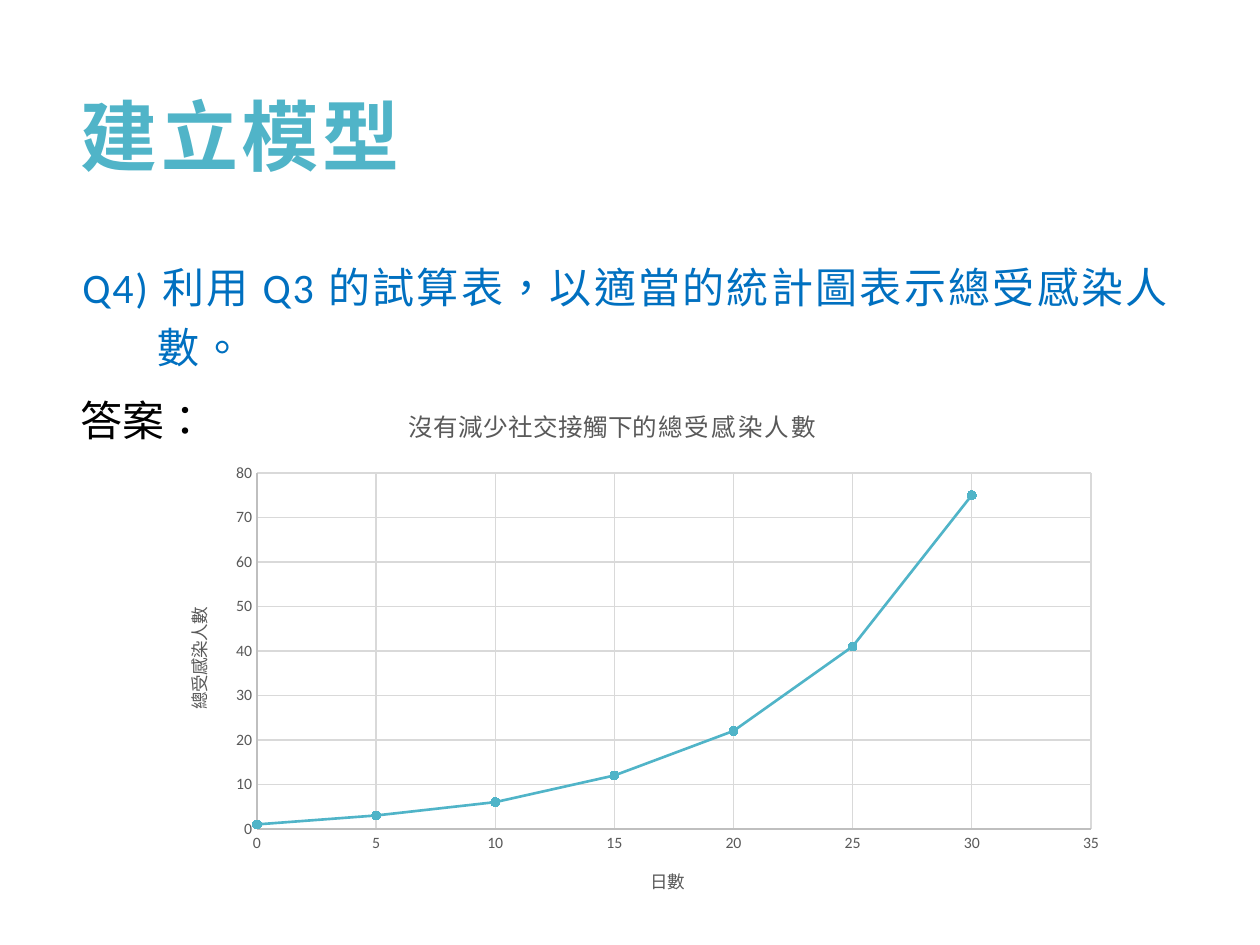
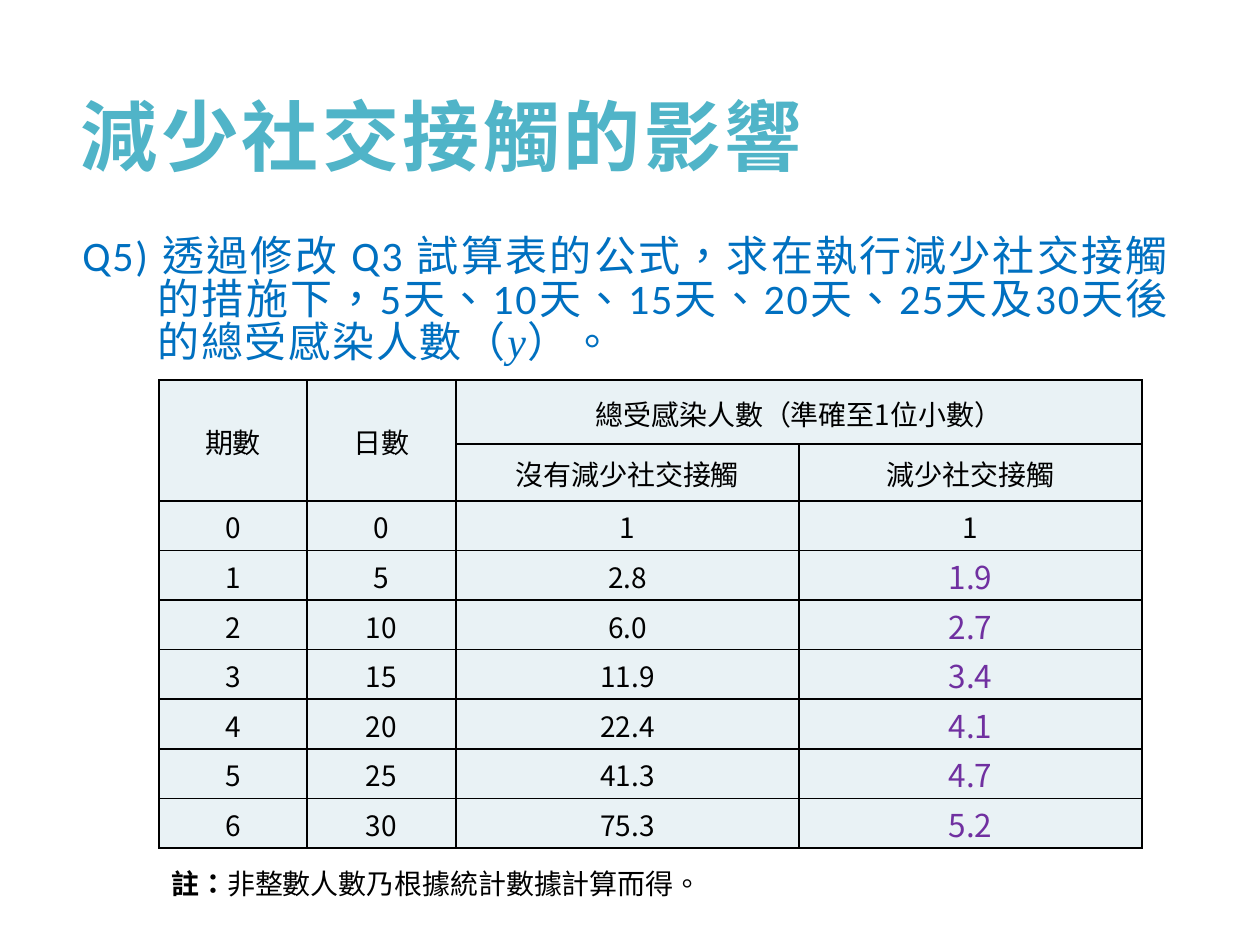
from lxml import etree
from pptx import Presentation
from pptx import util as u
from pptx.chart import data as chart_data
from pptx.dml import color as dml
from pptx.enum import chart as chart_enum, lang, text
from pptx.oxml import ns

SCALE = 914400 / 126
CHART_WIDTH, CHART_HEIGHT = 961, 532
COLOURS = {
    "title": "50B4C8",
    "question": "0070C0",
    "ink": "000000",
    "answer": "7030A0",
    "cell": "E9F2F5",
    "label": "595959",
    "axis": "BFBFBF",
    "grid": "D9D9D9",
}
BASE = {"name": "Calibri", "colour": "ink", "bold": False, "italic": False}
TITLE = {**BASE, "size": 44, "colour": "title", "bold": True, "spacing": 2}
QUESTION = {**BASE, "size": 24, "colour": "question", "spacing": 1}
ANSWER = {**BASE, "size": 24}
NOTE = {**BASE, "size": 16}
CELL = {**NOTE, "name": "Noto Sans CJK SC"}
RESULT = {**CELL, "size": 18, "colour": "answer"}
CHART_TITLE = {**BASE, "size": 14, "colour": "label"}
AXIS_TITLE = {**CHART_TITLE, "size": 10}
TICK_LABEL = {**CHART_TITLE, "size": 9}

PERIODS = [
    (0, 0, "1", "1"),
    (1, 5, "2.8", "1.9"),
    (2, 10, "6.0", "2.7"),
    (3, 15, "11.9", "3.4"),
    (4, 20, "22.4", "4.1"),
    (5, 25, "41.3", "4.7"),
    (6, 30, "75.3", "5.2"),
]


def px(length):
    return u.Emu(round(length * SCALE))


def rgb(colour):
    return dml.RGBColor.from_string(COLOURS[colour])


def set_attributes(target, values):
    for attribute, value in values.items():
        setattr(target, attribute, value)


def format_font(font, style):
    set_attributes(font, {
        "name": style["name"],
        "size": u.Pt(style["size"]),
        "bold": style["bold"],
        "italic": style["italic"],
    })
    font.color.rgb = rgb(style["colour"])


def write(paragraph, *pieces):
    for words, style in pieces:
        run = paragraph.add_run()
        run.text = words
        format_font(run.font, style)
        run.font.language_id = lang.MSO_LANGUAGE_ID.CHINESE_HONG_KONG_SAR
        properties = run.font._element
        if "spacing" in style:
            properties.set("spc", str(style["spacing"] * 100))
        if style["name"] == CELL["name"]:
            latin = properties.find(ns.qn("a:latin"))
            east_asian = etree.Element(ns.qn("a:ea"), typeface=style["name"])
            latin.addnext(east_asian)


def add_titled_slide(deck, heading):
    slide = deck.slides.add_slide(deck.slide_layouts[5])
    title = slide.shapes.title
    set_attributes(title, {
        "left": px(68), "top": px(69), "width": px(1114), "height": px(132),
    })
    set_attributes(title.text_frame, {
        "word_wrap": True,
        "auto_size": text.MSO_AUTO_SIZE.NONE,
        "vertical_anchor": text.MSO_ANCHOR.MIDDLE,
    })
    paragraph = title.text_frame.paragraphs[0]
    paragraph.alignment = text.PP_ALIGN.LEFT
    write(paragraph, (heading, TITLE))
    return slide


def add_text(slide, box, *pieces):
    frame = slide.shapes.add_textbox(*map(px, box)).text_frame
    frame.word_wrap = True
    paragraph = frame.paragraphs[0]
    write(paragraph, *pieces)
    return paragraph


def add_question(slide, top, height, line_spacing, *pieces):
    paragraph = add_text(slide, (70, top, 1112, height), *pieces)
    set_attributes(paragraph, {
        "alignment": text.PP_ALIGN.JUSTIFY,
        "line_spacing": line_spacing,
        "space_before": u.Pt(13),
    })
    properties = paragraph._p.get_or_add_pPr()
    properties.set("marL", str(px(75)))
    properties.set("indent", str(-px(75)))


def place(element, x, y, width=None, height=None):
    layout = element.find(ns.qn("c:layout"))
    if layout is None:
        layout = etree.Element(ns.qn("c:layout"))
        element.insert(len(element.findall(ns.qn("c:tx"))), layout)
    manual = etree.SubElement(layout, ns.qn("c:manualLayout"))
    settings = {"xMode": "edge", "yMode": "edge",
                "x": x / CHART_WIDTH, "y": y / CHART_HEIGHT}
    if width:
        settings = {"layoutTarget": "inner", **settings,
                    "w": width / CHART_WIDTH, "h": height / CHART_HEIGHT}
    for tag, value in settings.items():
        etree.SubElement(manual, ns.qn(f"c:{tag}"), val=str(value))


def write_chart_title(title, x, y, *pieces):
    write(title.text_frame.paragraphs[0], *pieces)
    place(title._element, x, y)


def draw_line(line, colour, width):
    line.color.rgb = rgb(colour)
    line.width = u.Pt(width)


def format_axis(axis, maximum, step, caption, x, y):
    set_attributes(axis, {
        "minimum_scale": 0,
        "maximum_scale": maximum,
        "major_unit": step,
        "major_tick_mark": chart_enum.XL_TICK_MARK.NONE,
        "minor_tick_mark": chart_enum.XL_TICK_MARK.NONE,
        "has_major_gridlines": True,
    })
    axis.tick_labels.number_format = "General"
    axis.tick_labels.number_format_is_linked = False
    format_font(axis.tick_labels.font, TICK_LABEL)
    draw_line(axis.format.line, "axis", 0.75)
    draw_line(axis.major_gridlines.format.line, "grid", 0.75)
    write_chart_title(axis.axis_title, x, y, (caption, AXIS_TITLE))


def add_infection_chart(slide):
    points = chart_data.XyChartData()
    infections = points.add_series("總受感染人數")
    for _, day, total, _ in PERIODS:
        infections.add_data_point(day, round(float(total)))
    chart = slide.shapes.add_chart(
        chart_enum.XL_CHART_TYPE.XY_SCATTER_LINES,
        *map(px, (158, 388, CHART_WIDTH, CHART_HEIGHT)), points).chart
    chart.has_legend = False
    format_font(chart.font, {**BASE, "size": 10})
    write_chart_title(chart.chart_title, 247, 13,
                      ("沒有減少社交接觸下的", CHART_TITLE),
                      ("總受感染人數", {**CHART_TITLE, "spacing": 1}))
    chart.chart_title.include_in_layout = False
    format_axis(chart.category_axis, 35, 5, "日數", 489, 476)
    format_axis(chart.value_axis, 80, 10, "總受感染人數", 24, 216)
    place(chart._chartSpace.chart.plotArea, 99, 85, 834, 356)

    chart.plots[0].vary_by_categories = False
    curve = chart.plots[0].series[0]
    curve.smooth = False
    draw_line(curve.format.line, "title", 1.5)
    marker = curve.marker
    marker.style = chart_enum.XL_MARKER_STYLE.CIRCLE
    marker.size = 5
    marker.format.fill.solid()
    marker.format.fill.fore_color.rgb = rgb("title")
    draw_line(marker.format.line, "title", 0.75)


def add_borders(cell):
    properties = cell._tc.get_or_add_tcPr()
    for index, side in enumerate(("lnL", "lnR", "lnT", "lnB")):
        border = etree.Element(ns.qn(f"a:{side}"), w=str(u.Pt(1)))
        fill = etree.SubElement(border, ns.qn("a:solidFill"))
        etree.SubElement(fill, ns.qn("a:srgbClr"), val=COLOURS["ink"])
        properties.insert(index, border)


def fill_cell(cell, words, style):
    set_attributes(cell, {
        "vertical_anchor": text.MSO_ANCHOR.MIDDLE,
        "margin_left": px(2),
        "margin_right": px(2),
        "margin_top": px(1 if style is RESULT else 2),
        "margin_bottom": 0,
    })
    cell.fill.solid()
    cell.fill.fore_color.rgb = rgb("cell")
    add_borders(cell)
    if words:
        paragraph = cell.text_frame.paragraphs[0]
        paragraph.alignment = text.PP_ALIGN.CENTER
        write(paragraph, (words, style))


def add_comparison_table(slide):
    headings = [
        ("期數", "日數", "總受感染人數（準確至1位小數）", ""),
        ("", "", "沒有減少社交接觸", "減少社交接觸"),
    ]
    rows = headings + PERIODS
    widths = [148, 149, 343, 343]
    heights = [64, 57] + [347 / len(PERIODS)] * len(PERIODS)
    table = slide.shapes.add_table(
        len(rows), len(widths),
        *map(px, (159, 380, sum(widths), sum(heights)))).table
    table.first_row = table.horz_banding = False
    for column, width in zip(table.columns, widths):
        column.width = px(width)
    for row, height in zip(table.rows, heights):
        row.height = px(height)
    for first, last in (((0, 0), (1, 0)), ((0, 1), (1, 1)), ((0, 2), (0, 3))):
        table.cell(*first).merge(table.cell(*last))
    first_result = len(headings) + 1
    for r, values in enumerate(rows):
        for c, value in enumerate(values):
            is_result = r >= first_result and c == 3
            fill_cell(table.cell(r, c), str(value), RESULT if is_result else CELL)


def build_model_slide(deck):
    slide = add_titled_slide(deck, "建立模型")
    add_question(slide, 245, 548, 1.2,
                 ("Q4) 利用 Q3 的試算表，以適當的統計圖表示總受感染人數。", QUESTION))
    add_infection_chart(slide)
    add_text(slide, (68, 388, 163, 63), ("答案：", ANSWER))


def build_distancing_slide(deck):
    slide = add_titled_slide(deck, "減少社交接觸的影響")
    variable = {**QUESTION, "name": "Times New Roman", "italic": True}
    add_question(slide, 231, 617, 0.85,
                 ("Q5) 透過修改 Q3 試算表的公式，求在執行減少社交接觸的措施下，"
                  "5天、10天、15天、20天、25天及30天後的總受感染人數（", QUESTION),
                 ("y", variable),
                 ("）。", QUESTION))
    add_comparison_table(slide)
    add_text(slide, (159, 860, 895, 47),
             ("註：", {**NOTE, "bold": True}),
             ("非整數人數乃根據統計數據計算而得。", NOTE))


def main():
    deck = Presentation()
    deck.slide_width, deck.slide_height = px(1260), px(945)
    build_model_slide(deck)
    build_distancing_slide(deck)
    deck.save("out.pptx")


if __name__ == "__main__":
    main()
